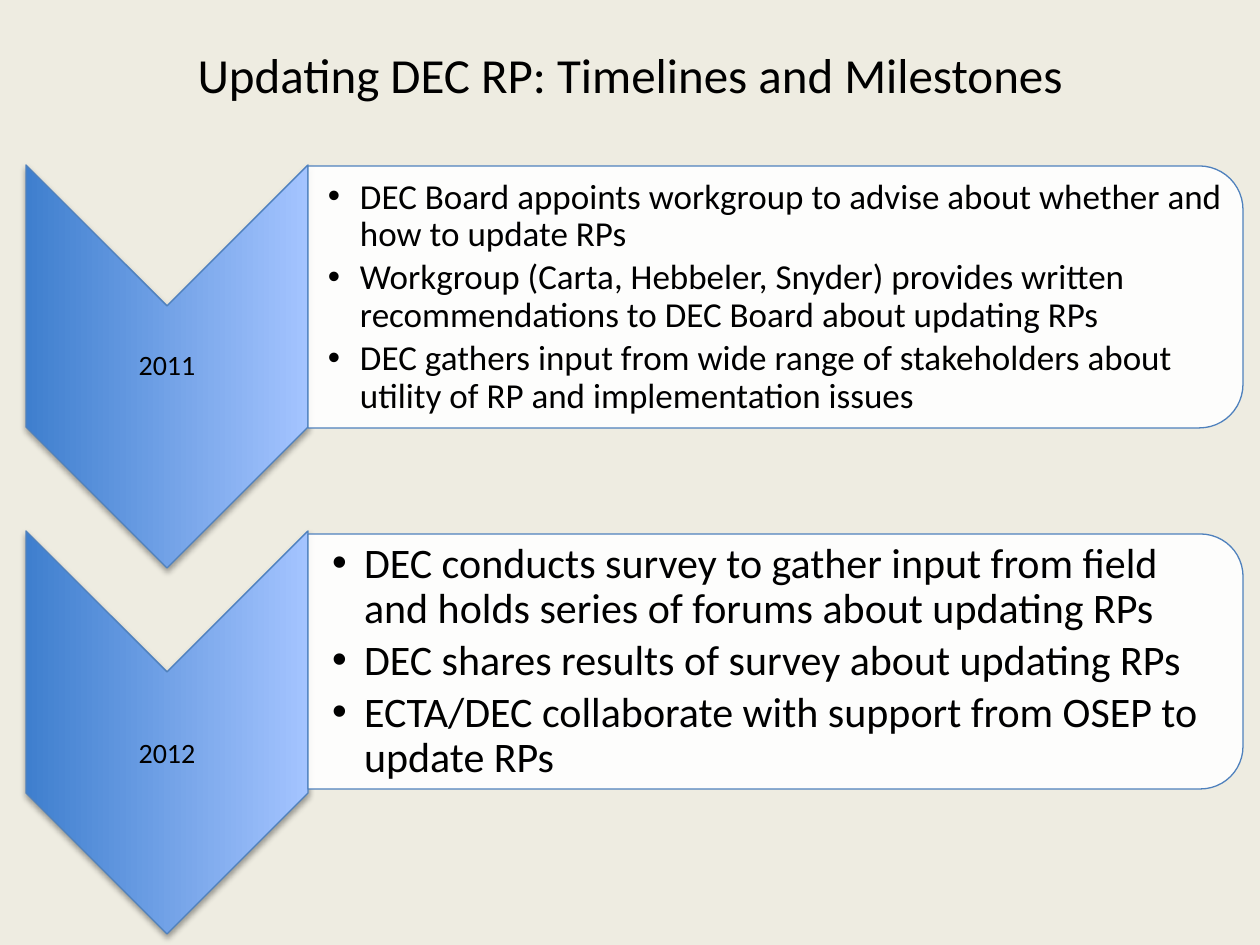
from lxml import etree
from pptx import Presentation
from pptx.dml.color import RGBColor
from pptx.enum.shapes import MSO_SHAPE
from pptx.enum.text import MSO_ANCHOR, MSO_AUTO_SIZE, PP_ALIGN
from pptx.oxml import parse_xml
from pptx.oxml.ns import nsdecls, qn
from pptx.util import Emu, Pt

CHEVRON, BAR = MSO_SHAPE.CHEVRON, MSO_SHAPE.ROUND_2_SAME_RECTANGLE
MIDDLE, NO_FIT = MSO_ANCHOR.MIDDLE, MSO_AUTO_SIZE.NONE
CENTER, LEFT = PP_ALIGN.CENTER, PP_ALIGN.LEFT
TWO_CONTENT = 3
COLORS = {"bg": "EEECE1", "text": "000000", "line": "4F81BD", "bar": "FFFFFF",
          "deep": "3F7FCE", "light": "A4C4FF", "shadow": "000000"}
SHADOW = (f'<a:effectLst {nsdecls("a")}>'
          '<a:outerShdw blurRad="40000" dist="23000" dir="5400000" rotWithShape="0">'
          f'<a:srgbClr val="{COLORS["shadow"]}"><a:alpha val="35000"/></a:srgbClr>'
          '</a:outerShdw></a:effectLst>')


def px(n):
    return Emu(round(n * 914400 / 126))


def rgb(name):
    return RGBColor.from_string(COLORS[name])


class Deck:
    font = "Calibri"
    indent = 32

    def __init__(self, width, height):
        self.prs = Presentation()
        self.prs.slide_width, self.prs.slide_height = px(width), px(height)
        self.s = self.prs.slides.add_slide(self.prs.slide_layouts[TWO_CONTENT])
        fill = self.s.background.fill
        fill.solid()
        fill.fore_color.rgb = rgb("bg")

    def place(self, sp, x, y, w, h):
        sp.left, sp.top, sp.width, sp.height = px(x), px(y), px(w), px(h)

    def set_text(self, sp, lines, size, align, margins, spacing=0.9, after=0.0):
        """Fill a shape with paragraphs; margins are left, top, right, bottom."""
        tf = sp.text_frame
        tf.text = "\n".join(lines)
        tf.word_wrap, tf.auto_size, tf.vertical_anchor = True, NO_FIT, MIDDLE
        tf.margin_left, tf.margin_top, tf.margin_right, tf.margin_bottom = map(px, margins)
        for p in tf.paragraphs:
            p.alignment, p.line_spacing = align, spacing
            p.space_before, p.space_after = Pt(0), Pt(size * after)
            p.font.name, p.font.size = self.font, Pt(size)
            p.font.color.rgb = rgb("text")
        return tf

    def title(self, text, x, y, w, h):
        sp = self.s.shapes.title
        self.place(sp, x, y, w, h)
        self.set_text(sp, [text], 28, CENTER, (12, 6, 12, 6), spacing=1.0)

    def turned(self, kind, x, y, w, h):
        """Add a shape turned 90 degrees that covers the given box."""
        sp = self.s.shapes.add_shape(kind, 0, 0, 0, 0)
        self.place(sp, x + (w - h) / 2, y + (h - w) / 2, h, w)
        sp.rotation = 90
        sp.line.color.rgb, sp.line.width = rgb("line"), Pt(0.75)
        sp.shadow.inherit = False
        return sp

    def chevron(self, x, y, w, h):
        sp = self.turned(CHEVRON, x, y, w, h)
        sp.fill.gradient()
        sp.fill.gradient_angle = 90
        for stop, name in zip(sp.fill.gradient_stops, ("deep", "light")):
            stop.color.rgb = rgb(name)
        spPr = sp._element.spPr
        spPr.replace(spPr.find(qn("a:effectLst")), parse_xml(SHADOW))

    def bar(self, x, y, w, h):
        sp = self.turned(BAR, x, y, w, h)
        sp.fill.solid()
        sp.fill.fore_color.rgb = rgb("bar")
        color = sp._element.spPr.find(qn("a:solidFill"))[0]
        etree.SubElement(color, qn("a:alpha"), val="90000")

    def label(self, text, x, y, w, h):
        sp = self.s.shapes.add_textbox(px(x), px(y), px(w), px(h))
        self.set_text(sp, [text], 16, CENTER, (1, 1, 1, 1))

    def bullets(self, idx, items, size, x, y, w, h, inset):
        """Use a body placeholder as a list in front of what is drawn so far."""
        sp = self.s.placeholders[idx]
        self.s.shapes._spTree.append(sp._element)
        self.place(sp, x, y, w, h)
        tf = self.set_text(sp, items, size, LEFT, (inset, 2, 2, 2), after=0.15)
        for p in tf.paragraphs:
            pPr = p._p.get_or_add_pPr()
            pPr.set("marL", str(px(self.indent)))
            pPr.set("indent", str(-px(self.indent)))
            bullet = parse_xml(f'<a:buChar {nsdecls("a")} char="•"/>')
            pPr.find(qn("a:defRPr")).addprevious(bullet)


# year, label drop, bar top, bar height, text size, text inset, items
MILESTONES = [
    ("2011", 0, 166, 262, 20, 20, [
        "DEC Board appoints workgroup to advise about whether and how to update RPs",
        "Workgroup (Carta, Hebbeler, Snyder) provides written recommendations "
        "to DEC Board about updating RPs",
        "DEC gathers input from wide range of stakeholders about utility of RP "
        "and implementation issues"]),
    ("2012", 22, 534, 255, 24, 24, [
        "DEC conducts survey to gather input from field and holds series of forums "
        "about updating RPs",
        "DEC shares results of survey about updating RPs",
        "ECTA/DEC collaborate with support from OSEP to update RPs"]),
]
TOP, STEP = 165, 366
CHEVRON_X, CHEVRON_W, CHEVRON_H = 26, 282, 403
BAR_X, BAR_W = CHEVRON_X + CHEVRON_W, 935


def main():
    deck = Deck(1260, 945)
    deck.title("Updating DEC RP: Timelines and Milestones", 63, 15, 1134, 118)
    for i, (year, drop, bar_y, bar_h, size, inset, items) in enumerate(MILESTONES):
        y = TOP + i * STEP
        deck.chevron(CHEVRON_X, y, CHEVRON_W, CHEVRON_H)
        deck.label(year, CHEVRON_X, y + 141 + drop, CHEVRON_W, 121)
        deck.bar(BAR_X, bar_y, BAR_W, bar_h)
        deck.bullets(i + 1, items, size, BAR_X, bar_y + 13, BAR_W - 12, bar_h - 25, inset)
    deck.prs.save("out.pptx")


if __name__ == "__main__":
    main()
